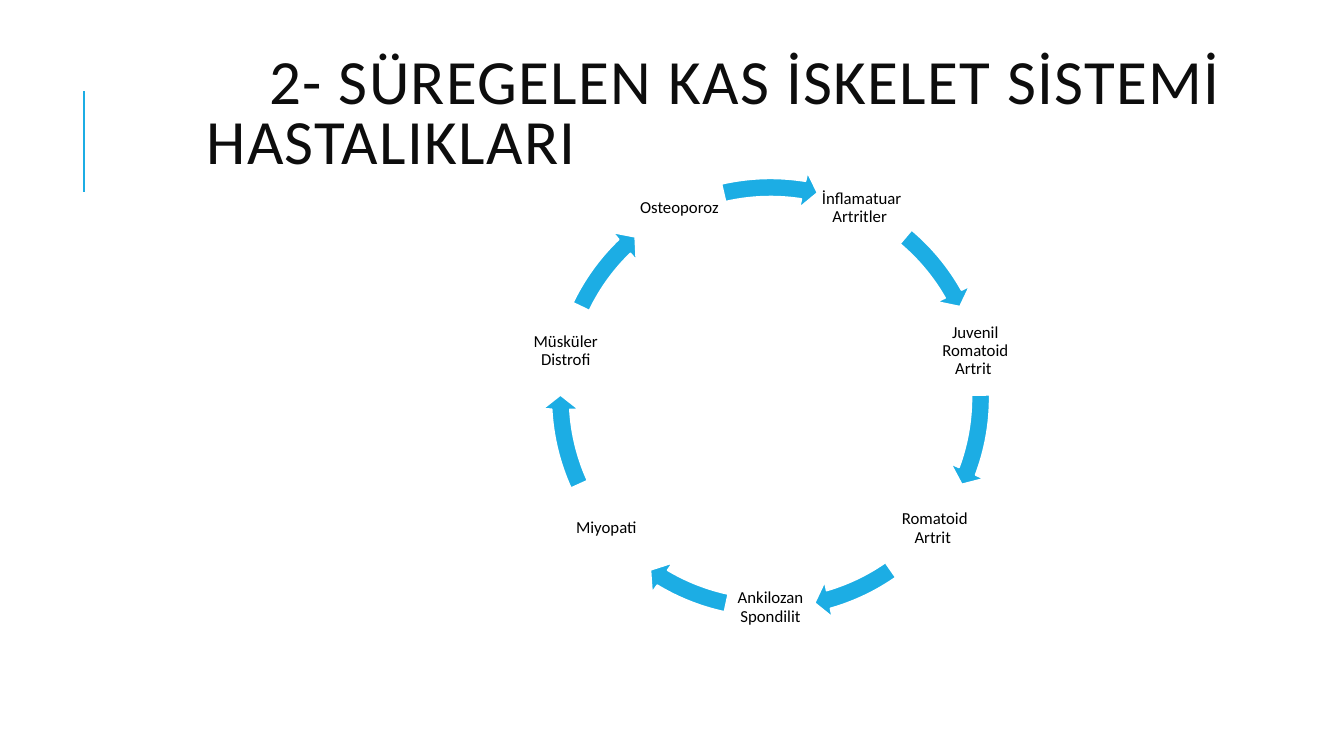
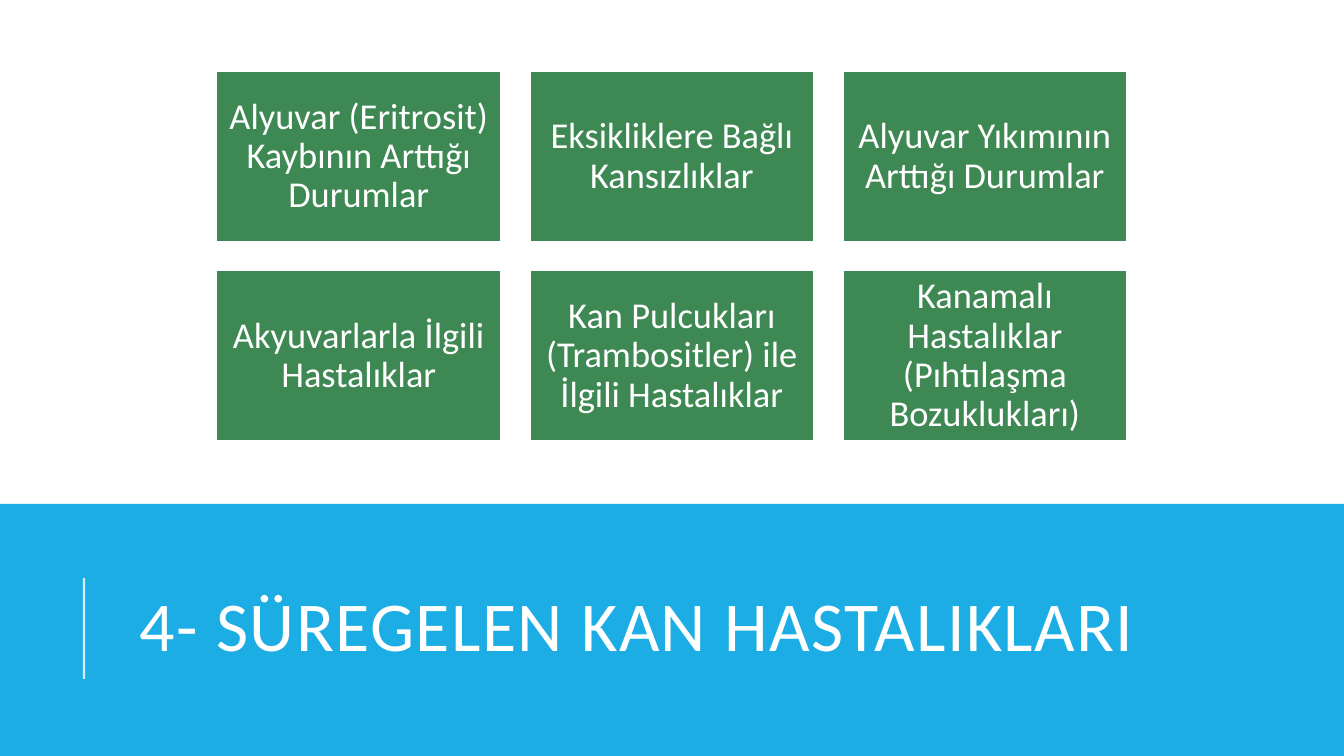
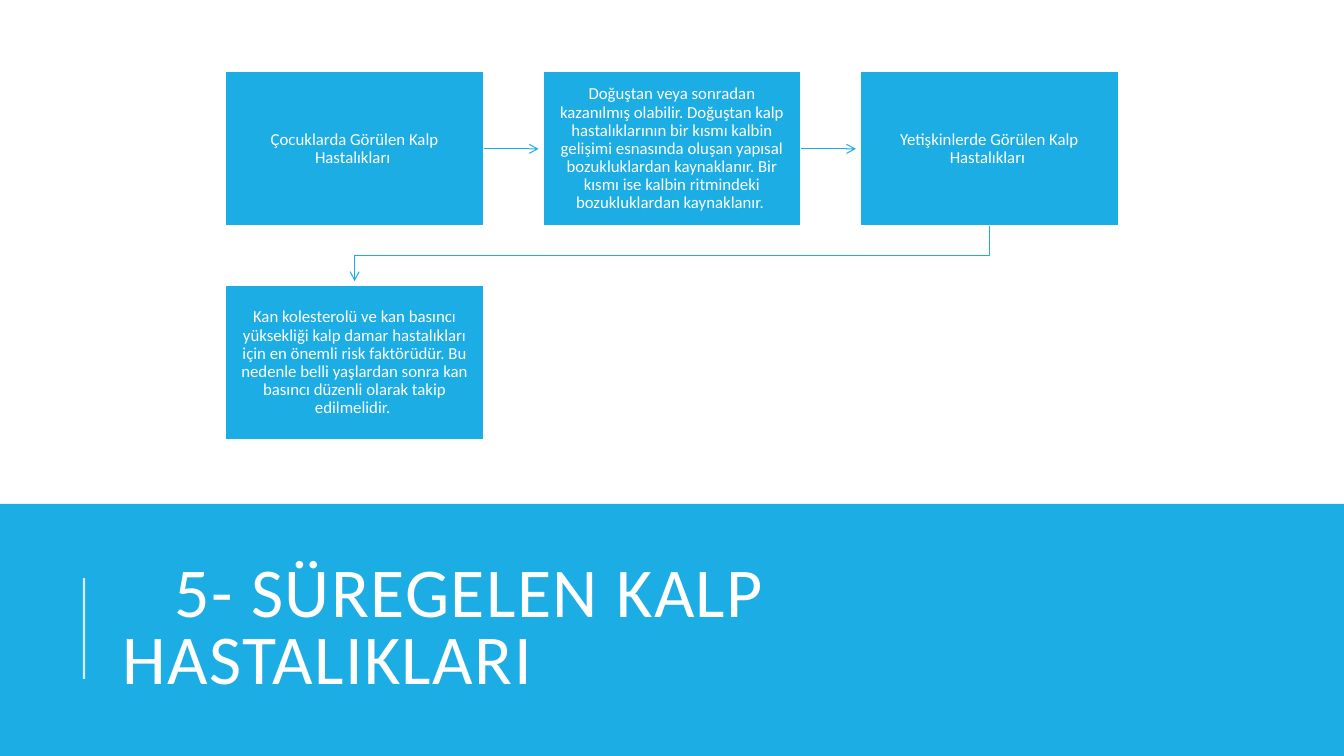
from dataclasses import dataclass
from math import cos, radians, sin

from lxml import etree
from pptx import Presentation
from pptx.dml.color import RGBColor
from pptx.enum.shapes import MSO_CONNECTOR, MSO_SHAPE
from pptx.enum.text import MSO_ANCHOR, PP_ALIGN
from pptx.oxml.ns import qn
from pptx.util import Pt

RECTANGLE = MSO_SHAPE.RECTANGLE
CIRCULAR_ARROW = MSO_SHAPE.CIRCULAR_ARROW
STRAIGHT = MSO_CONNECTOR.STRAIGHT
MIDDLE = MSO_ANCHOR.MIDDLE
LEFT, CENTER = PP_ALIGN.LEFT, PP_ALIGN.CENTER
RIGHT_SIDE = 3
PAGE_WIDTH, PAGE_HEIGHT = 960, 540


@dataclass(frozen=True)
class Theme:
    font: str = "Calibri"
    blue: str = "1CADE4"
    green: str = "3E8853"
    white: str = "FFFFFF"
    black: str = "000000"
    ink: str = "0D0D0D"
    title_size: int = 45
    band_title_size: int = 50
    card_size: int = 26
    small_size: int = 12
    border: float = 1.25
    rule: float = 1.5
    arrow: float = 0.75


class Deck:
    def __init__(self, theme):
        self.theme = theme
        self.file = Presentation()
        self.file.slide_width = Pt(PAGE_WIDTH)
        self.file.slide_height = Pt(PAGE_HEIGHT)
        self.page = None

    def new_page(self):
        self.page = self.file.slides.add_slide(self.file.slide_layouts[6])

    def fill_text(self, box, text, size, color, inset, align=CENTER, spacing=0.9):
        frame = box.text_frame
        frame.word_wrap = True
        frame.vertical_anchor = MIDDLE
        frame.margin_left = frame.margin_right = Pt(inset)
        frame.margin_top = frame.margin_bottom = Pt(inset)
        para = frame.paragraphs[0]
        para.text = text
        para.alignment = align
        para.line_spacing = spacing
        para.font.name = self.theme.font
        para.font.size = Pt(size)
        para.font.color.rgb = RGBColor.from_string(color)
        return para

    def label(self, text, left, top, width, height, size, color, inset, **style):
        box = self.page.shapes.add_textbox(Pt(left), Pt(top), Pt(width), Pt(height))
        return self.fill_text(box, text, size, color, inset, **style)

    def shape(self, kind, left, top, width, height, fill, border=True):
        shape = self.page.shapes.add_shape(kind, Pt(left), Pt(top), Pt(width), Pt(height))
        shape.shadow.inherit = False
        shape.fill.solid()
        shape.fill.fore_color.rgb = RGBColor.from_string(fill)
        if border:
            self.stroke(shape, self.theme.white, self.theme.border)
        else:
            shape.line.fill.background()
        return shape

    def stroke(self, shape, color, width):
        shape.line.color.rgb = RGBColor.from_string(color)
        shape.line.width = Pt(width)

    def arrowhead(self, shape):
        outline = shape.element.spPr.find(qn("a:ln"))
        etree.SubElement(outline, qn("a:tailEnd")).set("type", "arrow")

    def line(self, x1, y1, x2, y2, color, width):
        line = self.page.shapes.add_connector(STRAIGHT, Pt(x1), Pt(y1), Pt(x2), Pt(y2))
        self.stroke(line, color, width)
        etree.SubElement(line.element.spPr, qn("a:effectLst"))
        return line

    def side_rule(self, top, color, opacity=100):
        rule = self.line(60, top + 72, 60, top, color, self.theme.rule)
        if opacity < 100:
            tint = rule.element.spPr.find(".//" + qn("a:srgbClr"))
            etree.SubElement(tint, qn("a:alpha")).set("val", str(opacity * 1000))

    def title(self, text, left, top, height, size, color, indent):
        para = self.label(text, left, top, 765.4, height, size, color, 7.2,
                          align=LEFT, spacing=0.8)
        properties = para._p.get_or_add_pPr()
        properties.set("indent", str(Pt(indent)))
        properties.find(qn("a:defRPr")).set("spc", "100")

    def band_title(self, text, indent):
        theme = self.theme
        self.shape(RECTANGLE, 0, 360, PAGE_WIDTH, 180, theme.blue, border=False)
        self.title(text, 80.6, 391.7, 118, theme.band_title_size, theme.white, indent)
        self.side_rule(413, theme.white, 80)

    def card_grid(self, texts, width, height, gap, fill, size, inset):
        left = (PAGE_WIDTH - 3 * width - 2 * gap) / 2
        cards = []
        for index, text in enumerate(texts):
            row, column = divmod(index, 3)
            card = self.shape(RECTANGLE, left + column * (width + gap),
                              51 + row * (height + gap), width, height, fill)
            self.fill_text(card, text, size, self.theme.white, inset)
            cards.append(card)
        return cards

    def arrow_across(self, start, end):
        y = start.top.pt + start.height.pt / 2
        arrow = self.line(start.left.pt + start.width.pt, y, end.left.pt - 3, y,
                          self.theme.blue, self.theme.arrow)
        arrow.begin_connect(start, RIGHT_SIDE)
        self.arrowhead(arrow)

    def arrow_to_next_row(self, start, end):
        start_x = start.left + start.width // 2
        end_x = end.left + end.width // 2
        bottom = start.top + start.height
        middle = (bottom + end.top) // 2
        outline = self.page.shapes.build_freeform(start_x, bottom)
        outline.add_line_segments(
            [(start_x, middle), (end_x, middle), (end_x, end.top - Pt(3))], close=False)
        arrow = outline.convert_to_shape()
        arrow.shadow.inherit = False
        arrow.fill.background()
        self.stroke(arrow, self.theme.blue, self.theme.arrow)
        self.arrowhead(arrow)

    def cycle(self, steps, center_x, center_y, radius, label_size, ring_size):
        theme = self.theme
        turn = 360 / len(steps)
        for index, (text, start, end) in enumerate(steps):
            angle = radians(turn * (index + 0.5) - 90)
            self.label(text, center_x + radius * cos(angle) - label_size / 2,
                       center_y + radius * sin(angle) - label_size / 2,
                       label_size, label_size, theme.small_size, theme.black, 1.2)
            arrow = self.shape(CIRCULAR_ARROW, center_x - ring_size / 2,
                               center_y - ring_size / 2, ring_size, ring_size, theme.blue)
            settings = (0.04, 2.35, end * 0.6, start * 0.6, 0.04)
            for position, value in enumerate(settings):
                arrow.adjustments[position] = value


def skeletal_page(deck):
    theme = deck.theme
    deck.new_page()
    deck.side_rule(65, theme.blue)
    deck.title("2- SÜREGELEN KAS İSKELET SİSTEMİ HASTALIKLARI",
               140.4, 49, 68.4, theme.title_size, theme.ink, 45)
    steps = [
        ("İnflamatuar Artritler ", 310.09, 330.46),
        ("Juvenil Romatoid Artrit ", 359.29, 20.51),
        ("Romatoid Artrit ", 55.13, 73.96),
        ("Ankilozan Spondilit", 102.13, 120.96),
        ("Miyopati", 155.58, 176.8),
        ("Müsküler Distrofi", 205.63, 226),
        ("Osteoporoz", 257.07, 279.02),
    ]
    deck.cycle(steps, 550.4, 284, 150, 62.6, 326.2)


def blood_page(deck):
    theme = deck.theme
    deck.new_page()
    deck.band_title("4- SÜREGELEN KAN HASTALIKLARI", 12)
    deck.card_grid([
        "Alyuvar (Eritrosit) Kaybının Arttığı Durumlar",
        "Eksikliklere Bağlı Kansızlıklar",
        "Alyuvar Yıkımının Arttığı Durumlar",
        "Akyuvarlarla İlgili Hastalıklar",
        "Kan Pulcukları (Trambositler) ile İlgili Hastalıklar",
        "Kanamalı Hastalıklar (Pıhtılaşma Bozuklukları)",
    ], 203.3, 122, 20.3, theme.green, theme.card_size, 7.8)


def heart_page(deck):
    theme = deck.theme
    deck.new_page()
    deck.band_title("5- SÜREGELEN KALP HASTALIKLARI", 37)
    children, causes, adults, risks = deck.card_grid([
        "Çocuklarda Görülen Kalp Hastalıkları ",
        "Doğuştan veya sonradan kazanılmış olabilir. Doğuştan kalp hastalıklarının "
        "bir kısmı kalbin gelişimi esnasında oluşan yapısal bozukluklardan kaynaklanır. "
        "Bir kısmı ise kalbin ritmindeki bozukluklardan kaynaklanır. ",
        "Yetişkinlerde Görülen Kalp Hastalıkları ",
        "Kan kolesterolü ve kan basıncı yüksekliği kalp damar hastalıkları için en önemli "
        "risk faktörüdür. Bu nedenle belli yaşlardan sonra kan basıncı düzenli olarak "
        "takip edilmelidir. ",
    ], 184.6, 110.7, 42.1, theme.blue, theme.small_size, 9.1)
    deck.arrow_across(children, causes)
    deck.arrow_across(causes, adults)
    deck.arrow_to_next_row(adults, risks)


def main():
    deck = Deck(Theme())
    skeletal_page(deck)
    blood_page(deck)
    heart_page(deck)
    deck.file.save("out.pptx")


if __name__ == "__main__":
    main()
